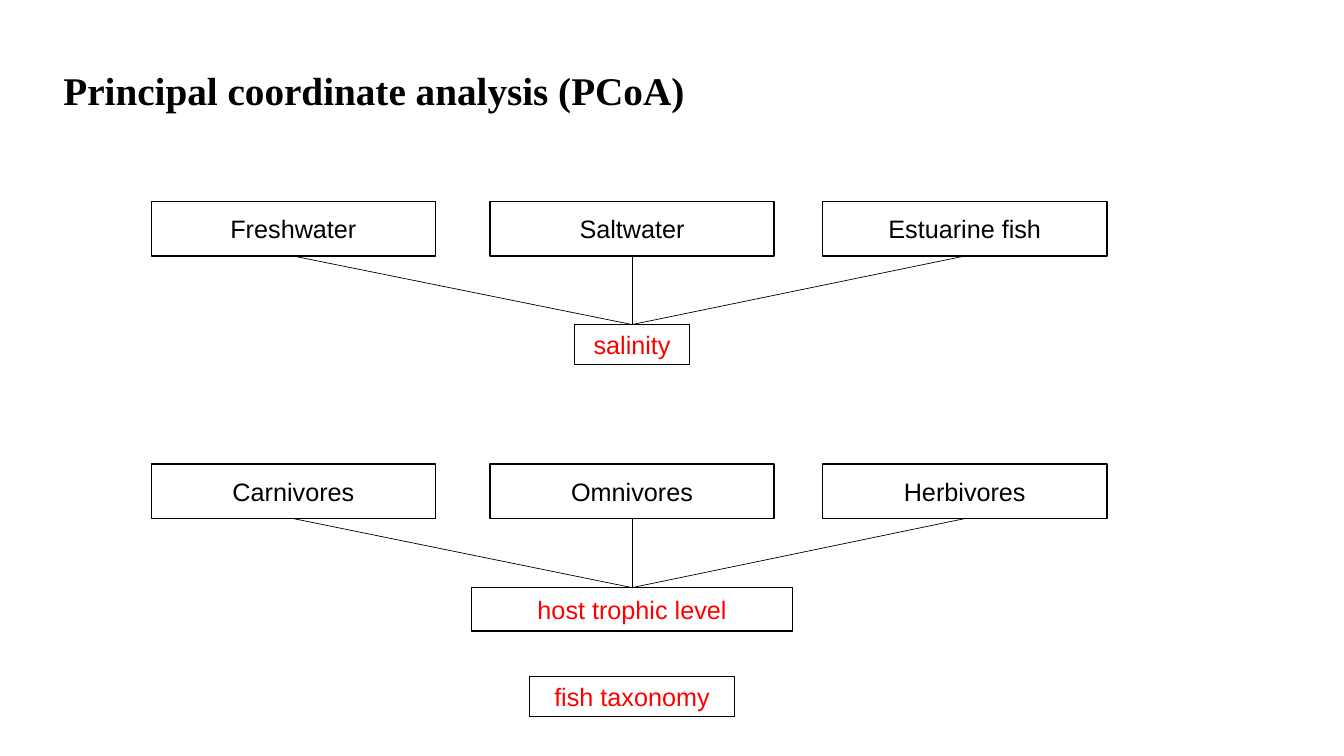
from lxml import etree
from pptx import Presentation
from pptx import util as u
from pptx.dml.color import RGBColor
from pptx.enum import shapes, text

THEME = {
    "ink": RGBColor(0, 0, 0), "accent": RGBColor(255, 0, 0),
    "body": "Arial", "head": "Times New Roman",
    "body_pt": 18, "head_pt": 28, "box_line": 1, "link_line": 0.5,
}

prs = Presentation()
prs.slide_width, prs.slide_height = u.Inches(13.33), u.Inches(7.5)
slide = prs.slides.add_slide(prs.slide_layouts[6])

# Grid: one column or row is one percent of the slide
COL, ROW = prs.slide_width / 100, prs.slide_height / 100
CENTRES = [21.83, 47.03, 71.78]
MIDDLE = CENTRES[1]
GROUP_W, GROUP_H = 21.15, 7.2


def write(sp, words, font=THEME["body"], size=THEME["body_pt"], color=THEME["ink"],
          bold=False, align=text.PP_ALIGN.CENTER, anchor=text.MSO_ANCHOR.MIDDLE):
    tf = sp.text_frame
    tf.word_wrap = True
    tf.vertical_anchor = anchor
    p = tf.paragraphs[0]
    p.alignment = align
    r = p.add_run()
    r.text = words
    r.font.name, r.font.size, r.font.bold = font, u.Pt(size), bold
    r.font.color.rgb = color


def add_box(parent, words, centre, top, width, height, **fmt):
    sp = parent.add_shape(shapes.MSO_SHAPE.RECTANGLE, round((centre - width / 2) * COL),
                          round(top * ROW), round(width * COL), round(height * ROW))
    sp.shadow.inherit = False
    sp.fill.background()
    sp.line.color.rgb = THEME["ink"]
    sp.line.width = u.Pt(THEME["box_line"])
    write(sp, words, **fmt)
    return sp


# Trees: three fish groups joined to one factor
trees = [
    (["Freshwater", "Saltwater", "Estuarine fish"], 26.67, ("salinity", 42.93, 8.55, 5.33)),
    (["Carnivores", "Omnivores", "Herbivores"], 61.4, ("host trophic level", 77.73, 23.93, 5.73)),
]
for names, top, (factor, factor_top, factor_w, factor_h) in trees:
    tree = slide.shapes.add_group_shape().shapes
    boxes = [add_box(tree, name, centre, top, GROUP_W, GROUP_H)
             for name, centre in zip(names, CENTRES)]
    target = add_box(tree, factor, MIDDLE, factor_top, factor_w, factor_h,
                     color=THEME["accent"])
    for sp in boxes:
        link = tree.add_connector(shapes.MSO_CONNECTOR.STRAIGHT, 0, 0, 0, 0)
        link.begin_connect(sp, 2)
        link.end_connect(target, 0)
        link.line.color.rgb = THEME["ink"]
        link.line.width = u.Pt(THEME["link_line"])
        etree.SubElement(link._element.spPr,
                         "{http://schemas.openxmlformats.org/drawingml/2006/main}effectLst")

# Title
title = slide.shapes.add_textbox(round(3.98 * COL), round(8.13 * ROW),
                                 round(50 * COL), round(7.6 * ROW))
write(title, "Principal coordinate analysis (PCoA)", font=THEME["head"],
      size=THEME["head_pt"], bold=True, align=text.PP_ALIGN.LEFT,
      anchor=text.MSO_ANCHOR.TOP)
title.text_frame.auto_size = text.MSO_AUTO_SIZE.SHAPE_TO_FIT_TEXT

# Factor on its own
add_box(slide.shapes, "fish taxonomy", MIDDLE, 89.47, 15.3, 5.33, color=THEME["accent"])

prs.save("out.pptx")
